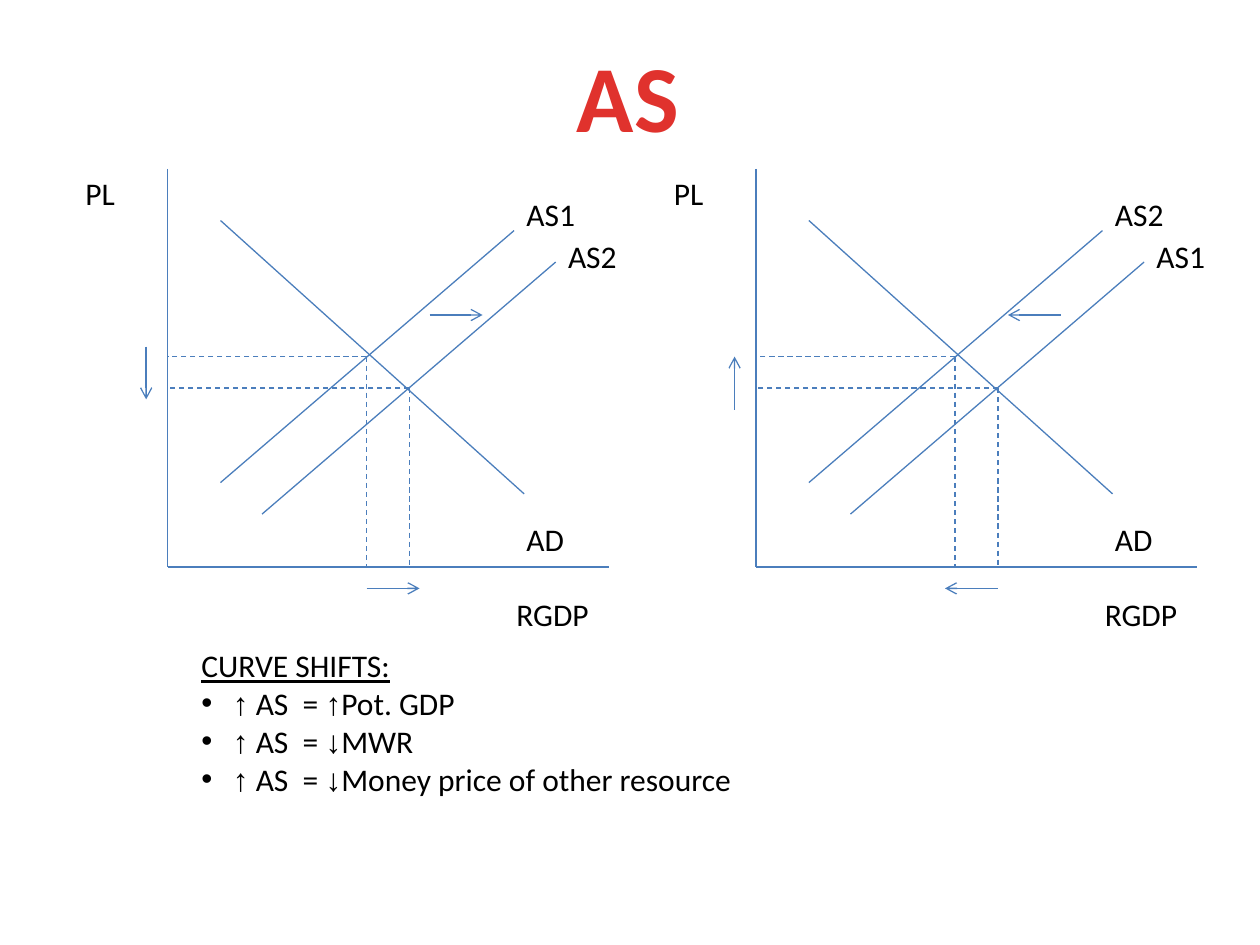
import dataclasses
import itertools

import lxml.etree
import pptx
import pptx.dml.color
import pptx.enum.dml
import pptx.enum.shapes
import pptx.enum.text
import pptx.oxml.ns
import pptx.util

Inches = pptx.util.Inches
qn = pptx.oxml.ns.qn


@dataclasses.dataclass(frozen=True)
class Theme:
    ink: str = "000000"
    red: str = "E0322D"
    blue: str = "4B7EBC"
    font: str = "Calibri"
    symbol: str = "Arial"
    title: int = 54
    body: int = 18
    stroke: float = 0.75


class Deck:
    """Draw styled text and lines on the current slide."""

    def __init__(self, theme):
        self.theme = theme
        self.file = pptx.Presentation()
        self.file.slide_width, self.file.slide_height = Inches(10), Inches(7.5)
        self.slide = self.file.slides.add_slide(self.file.slide_layouts[6])

    def style(self, run, size, color, bold=False):
        font = run.font
        font.name = self.theme.symbol if run.text[0] in "↑↓" else self.theme.font
        font.size = pptx.util.Pt(size)
        font.bold = bold
        font.color.rgb = pptx.dml.color.RGBColor.from_string(color)

    def box(self, x, y, w, h):
        frame = self.slide.shapes.add_textbox(
            Inches(x), Inches(y), Inches(w), Inches(h)).text_frame
        frame.word_wrap = False
        frame.auto_size = pptx.enum.text.MSO_AUTO_SIZE.SHAPE_TO_FIT_TEXT
        return frame

    def title(self, text, x, y, w, h):
        frame = self.box(x, y, w, h)
        frame.text = text
        line = frame.paragraphs[0]
        line.alignment = pptx.enum.text.PP_ALIGN.CENTER
        self.style(line.runs[0], self.theme.title, self.theme.red, True)
        line.runs[0]._r.get_or_add_rPr().set("spc", "50")

    def label(self, text, x, y, w, h=0.4):
        frame = self.box(x, y, w, h)
        frame.text = text
        self.style(frame.paragraphs[0].runs[0], self.theme.body, self.theme.ink)
        return frame

    def notes(self, head, items, x, y, w, h):
        frame = self.label(head, x, y, w, h)
        frame.paragraphs[0].runs[0].font.underline = True
        for item in items:
            line = frame.add_paragraph()
            props = line._p.get_or_add_pPr()
            props.set("marL", str(Inches(0.25)))
            props.set("indent", str(-Inches(0.25)))
            lxml.etree.SubElement(props, qn("a:buFont")).set("typeface", self.theme.symbol)
            lxml.etree.SubElement(props, qn("a:buChar")).set("char", "•")
            for _, part in itertools.groupby(item, lambda c: c in "↑↓"):
                run = line.add_run()
                run.text = "".join(part)
                self.style(run, self.theme.body, self.theme.ink)

    def line(self, start, end, dash=False, arrow=False):
        link = self.slide.shapes.add_connector(
            pptx.enum.shapes.MSO_CONNECTOR.STRAIGHT,
            *(Inches(v) for v in (*start, *end)))
        link.line.color.rgb = pptx.dml.color.RGBColor.from_string(self.theme.blue)
        link.line.width = pptx.util.Pt(self.theme.stroke)
        if dash:
            link.line.dash_style = pptx.enum.dml.MSO_LINE.DASH
        props = link._element.spPr
        if arrow:
            tail = lxml.etree.SubElement(props.find(qn("a:ln")), qn("a:tailEnd"))
            tail.set("type", "arrow")
        lxml.etree.SubElement(props, qn("a:effectLst"))

    def graph(self, left, upper, lower, grows):
        base, top = 4.5, 1.34
        for start, end in (
            ((0, top), (0, base)),
            ((0, base), (3.5, base)),
            ((0.42, 1.75), (2.83, 3.92)),
            ((0.42, 3.83), (2.75, 1.83)),
            ((0.75, 4.08), (3.08, 2.08)),
        ):
            self.line((left + start[0], start[1]), (left + end[0], end[1]))

        for x, y in ((1.58, 2.83), (1.92, 3.08)):
            self.line((left + x, y), (left, y), dash=True)
            self.line((left + x, y), (left + x, base), dash=True)

        price = (2.75, 3.17) if grows else (3.25, 2.83)
        self.line((left - 0.17, price[0]), (left - 0.17, price[1]), arrow=True)
        for near, far, y in ((2.08, 2.5, 2.5), (1.58, 2, 4.67)):
            if not grows:
                shift = 0 if y == 2.5 else -0.08
                near, far = far + shift, near + shift - 0.08 * (y == 2.5)
                near -= 0.08 * (y == 2.5)
            self.line((left + near, y), (left + far, y), arrow=True)

        for text, x, y, w in (
            ("PL", -0.75, 1.33, 0.44),
            (upper, 2.75, 1.5, 0.59),
            (lower, 3.08, 1.83, 0.59),
            ("AD", 2.75, 4.08, 0.5),
            ("RGDP", 2.67, 4.67, 0.78),
        ):
            self.label(text, left + x, y, w)

    def save(self):
        self.file.save("out.pptx")


def main():
    deck = Deck(Theme())
    deck.title("AS", 4.47, 0.25, 1.03, 1.01)
    deck.graph(1.33, "AS1", "AS2", grows=True)
    deck.graph(6, "AS2", "AS1", grows=False)
    deck.notes(
        "CURVE SHIFTS:",
        ("↑ AS  = ↑Pot. GDP", "↑ AS  = ↓MWR", "↑ AS  = ↓Money price of other resource"),
        1.5, 5.08, 4.41, 1.31)
    deck.save()


if __name__ == "__main__":
    main()
